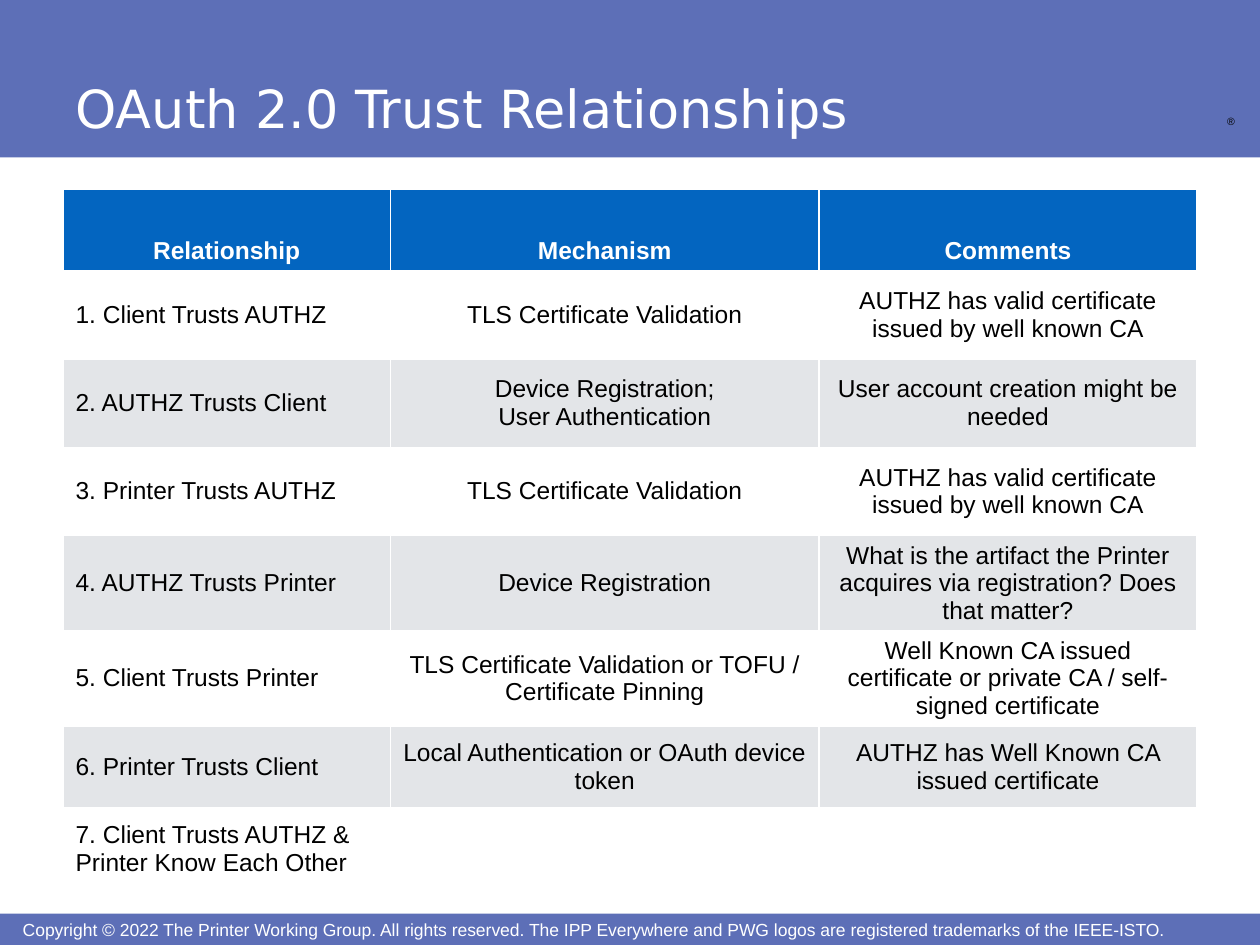
from dataclasses import dataclass

from pptx import Presentation
from pptx.dml.color import RGBColor
from pptx.enum.shapes import MSO_SHAPE
from pptx.enum.text import MSO_ANCHOR, MSO_AUTO_SIZE, PP_ALIGN
from pptx.util import Inches, Pt


@dataclass(frozen=True)
class Theme:
    band: RGBColor = RGBColor(0x5D, 0x6F, 0xB7)
    header: RGBColor = RGBColor(0x03, 0x65, 0xC0)
    stripe: RGBColor = RGBColor(0xE3, 0xE5, 0xE8)
    white: RGBColor = RGBColor(0xFF, 0xFF, 0xFF)
    black: RGBColor = RGBColor(0x00, 0x00, 0x00)
    title_font: str = "DejaVu Sans"
    body_font: str = "Arial"
    title_size: int = 30
    table_size: int = 14
    footer_size: int = 10
    mark_size: int = 6


THEME = Theme()
COLUMN_WIDTHS = (2.6, 3.4, 3)
ROW_HEIGHTS = (0.65, 0.7, 0.7, 0.7, 0.7, 0.7, 0.65, 0.65)
CERTIFICATE_VALIDATION = "TLS Certificate Validation"
VALID_CERTIFICATE = "AUTHZ has valid certificate issued by well known CA"
ROWS = (
    ("Relationship", "Mechanism", "Comments"),
    ("1. Client Trusts AUTHZ", CERTIFICATE_VALIDATION, VALID_CERTIFICATE),
    ("2. AUTHZ Trusts Client", "Device Registration;\vUser Authentication",
     "User account creation might be needed"),
    ("3. Printer Trusts AUTHZ", CERTIFICATE_VALIDATION, VALID_CERTIFICATE),
    ("4. AUTHZ Trusts Printer", "Device Registration",
     "What is the artifact the Printer acquires via registration? Does that matter?"),
    ("5. Client Trusts Printer", "TLS Certificate Validation or TOFU / Certificate Pinning",
     "Well Known CA issued certificate or private CA / self-signed certificate"),
    ("6. Printer Trusts Client", "Local Authentication or OAuth device token",
     "AUTHZ has Well Known CA issued certificate"),
    ("7. Client Trusts AUTHZ & Printer Know Each Other", "", ""),
)


def format_text(text_frame, size, color, font_name=THEME.body_font,
                bold=False, alignment=PP_ALIGN.LEFT):
    for paragraph in text_frame.paragraphs:
        paragraph.alignment = alignment
        for run in paragraph.runs:
            run.font.name = font_name
            run.font.size = Pt(size)
            run.font.bold = bold
            run.font.color.rgb = color


def set_margins(text_frame, left, other):
    text_frame.margin_left = Inches(left)
    text_frame.margin_top = Inches(other)
    text_frame.margin_right = Inches(other)
    text_frame.margin_bottom = Inches(other)


def add_band(slide, top, height):
    band = slide.shapes.add_shape(
        MSO_SHAPE.RECTANGLE, 0, Inches(top), Inches(10), Inches(height))
    band.shadow.inherit = False
    band.fill.solid()
    band.fill.fore_color.rgb = THEME.band
    band.line.fill.background()


def add_label(slide, text, box, size, color, margins, wrap, anchor):
    label = slide.shapes.add_textbox(*map(Inches, box))
    text_frame = label.text_frame
    text_frame.text = text
    text_frame.word_wrap = wrap
    text_frame.vertical_anchor = anchor
    set_margins(text_frame, *margins)
    format_text(text_frame, size, color)


def set_title(slide, text):
    title = slide.shapes.title
    title.left, title.top = Inches(0.5), Inches(0.05)
    title.width, title.height = Inches(8.28), Inches(1.11)
    text_frame = title.text_frame
    text_frame.text = text
    text_frame.auto_size = MSO_AUTO_SIZE.NONE
    text_frame.vertical_anchor = MSO_ANCHOR.BOTTOM
    set_margins(text_frame, 0.1, 0.06)
    format_text(text_frame, THEME.title_size, THEME.white, THEME.title_font)
    title.element.getparent().append(title.element)


def fill_cell(cell, text, row_index, column_index):
    is_header = row_index == 0
    cell.fill.solid()
    if is_header:
        cell.fill.fore_color.rgb = THEME.header
    else:
        cell.fill.fore_color.rgb = THEME.white if row_index % 2 else THEME.stripe
    cell.vertical_anchor = MSO_ANCHOR.BOTTOM if is_header else MSO_ANCHOR.MIDDLE
    cell.text_frame.text = text
    is_left = column_index == 0 and not is_header
    format_text(cell.text_frame, THEME.table_size,
                THEME.white if is_header else THEME.black, bold=is_header,
                alignment=PP_ALIGN.LEFT if is_left else PP_ALIGN.CENTER)


def add_trust_table(slide):
    frame = slide.shapes.add_table(
        len(ROWS), len(COLUMN_WIDTHS), Inches(0.5), Inches(1.5),
        Inches(sum(COLUMN_WIDTHS)), Inches(sum(ROW_HEIGHTS)))
    table = frame.table
    table.horz_banding = False
    for column, width in zip(table.columns, COLUMN_WIDTHS):
        column.width = Inches(width)
    for row_index, (row, height, texts) in enumerate(zip(table.rows, ROW_HEIGHTS, ROWS)):
        row.height = Inches(height)
        for column_index, text in enumerate(texts):
            fill_cell(row.cells[column_index], text, row_index, column_index)


def main():
    presentation = Presentation()
    presentation.slide_width = Inches(10)
    presentation.slide_height = Inches(7.5)
    slide = presentation.slides.add_slide(presentation.slide_layouts.get_by_name("Title Only"))
    add_band(slide, 7.25, 0.25)
    add_band(slide, 0, 1.25)
    add_label(slide, "®", (9.64, 0.86, 0.27, 0.19), THEME.mark_size, THEME.black,
              (0.1, 0.06), False, MSO_ANCHOR.TOP)
    add_label(slide, "Copyright © 2022 The Printer Working Group. All rights reserved. "
              "The IPP Everywhere and PWG logos are registered trademarks of the IEEE-ISTO.",
              (0.14, 7.29, 9.35, 0.17), THEME.footer_size, THEME.white,
              (0.04, 0), True, MSO_ANCHOR.MIDDLE)
    set_title(slide, "OAuth 2.0 Trust Relationships")
    add_trust_table(slide)
    presentation.save("out.pptx")


if __name__ == "__main__":
    main()
